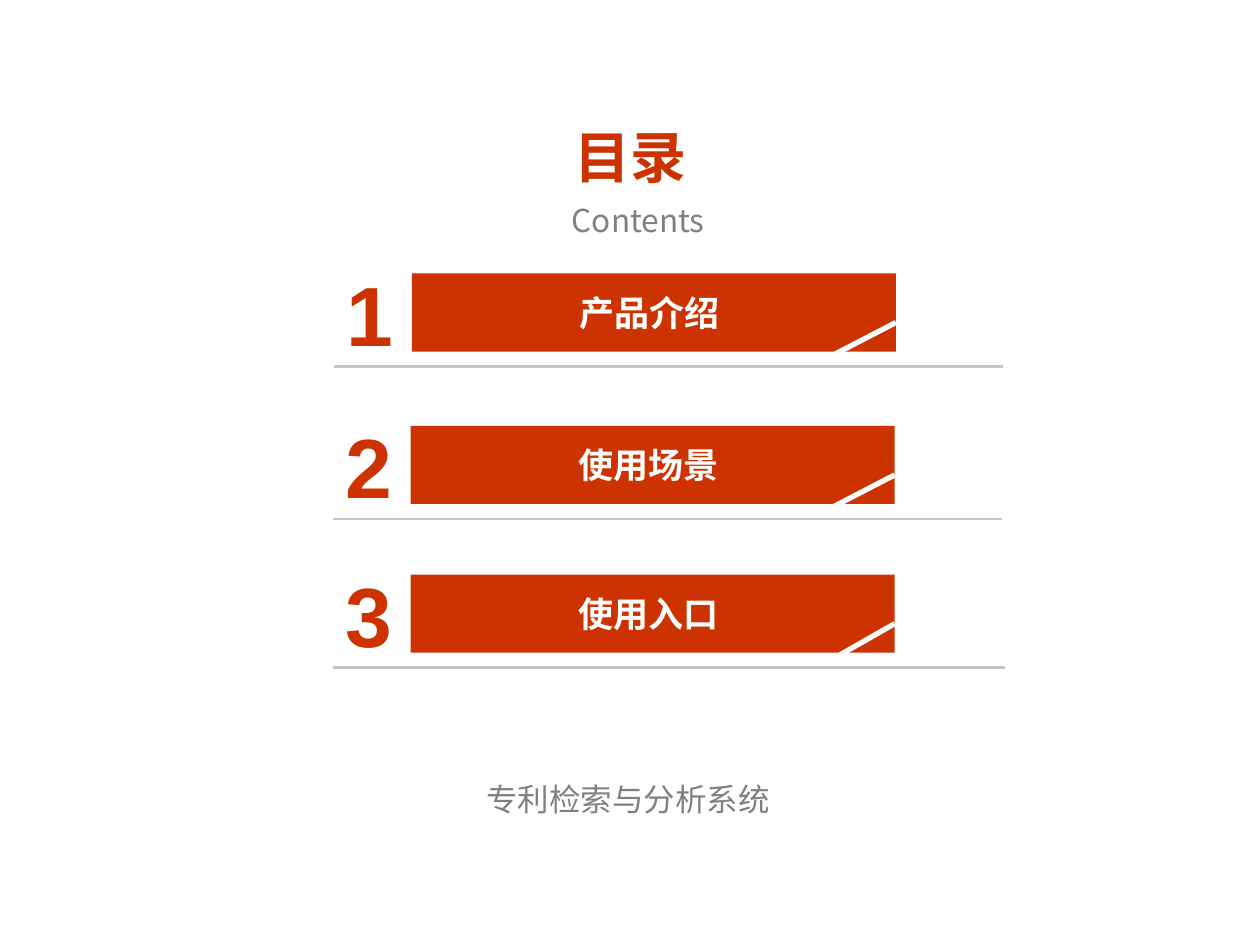
from dataclasses import dataclass

import lxml.etree
import pptx
import pptx.dml.color
import pptx.enum.shapes
import pptx.enum.text
import pptx.oxml.ns
import pptx.util

EMU_PER_PX = 9144  # 100 px to the inch
ALIGN = pptx.enum.text.PP_ALIGN
ANCHOR = pptx.enum.text.MSO_ANCHOR


@dataclass(frozen=True)
class Theme:
    accent: str = "CC3300"
    rule: str = "C5C5C5"
    muted: str = "808080"
    white: str = "FFFFFF"
    latin: str = "Arial"
    chinese: str = "Noto Sans CJK SC"
    number_size: int = 48
    title_size: int = 32
    bar_size: int = 20
    caption_size: int = 18
    slash_width: float = 3
    rule_width: float = 1.5


@dataclass(frozen=True)
class TextStyle:
    size: int
    color: str
    font: str
    bold: bool = False


@dataclass(frozen=True)
class Entry:
    number: str
    title: str
    left: int
    top: int
    slash_height: int = 29
    rule_length: int = 531


THEME = Theme()
NUMBER = TextStyle(THEME.number_size, THEME.accent, THEME.latin, True)
BAR = TextStyle(THEME.bar_size, THEME.white, THEME.chinese, True)
TITLE = TextStyle(THEME.title_size, THEME.accent, THEME.chinese, True)
SUBTITLE = TextStyle(THEME.caption_size, THEME.muted, THEME.chinese)
FOOTER = TextStyle(THEME.caption_size, THEME.muted, THEME.latin)

BAR_WIDTH, BAR_HEIGHT = 384, 62
# The space after each title shifts the centred text slightly left
ENTRIES = [
    Entry("1", "产品介绍 ", 327, 217),
    Entry("2", "使用场景 ", 326, 338),
    Entry("3", "使用入口 ", 326, 456, slash_height=32, rule_length=534),
]


def px(length: int) -> int:
    return pptx.util.Emu(length * EMU_PER_PX)


def rgb(color: str) -> pptx.dml.color.RGBColor:
    return pptx.dml.color.RGBColor.from_string(color)


def write(text_frame, text: str, style: TextStyle, align=ALIGN.LEFT) -> None:
    paragraph = text_frame.paragraphs[0]
    paragraph.alignment = align
    run = paragraph.add_run()
    run.text = text
    run.font.size = pptx.util.Pt(style.size)
    run.font.bold = style.bold
    run.font.name = style.font
    run.font.color.rgb = rgb(style.color)
    # Chinese characters take the East Asian font
    east_asian = lxml.etree.SubElement(
        run.font._element, pptx.oxml.ns.qn("a:ea"))
    east_asian.set("typeface", THEME.chinese)


def add_text(slide, left: int, top: int, width: int, height: int, text: str,
             style: TextStyle, align=ALIGN.LEFT, anchor=ANCHOR.TOP,
             wrap: bool = True) -> None:
    shape = slide.shapes.add_textbox(px(left), px(top), px(width), px(height))
    shape.text_frame.word_wrap = wrap
    shape.text_frame.vertical_anchor = anchor
    write(shape.text_frame, text, style, align)


def add_bar(slide, left: int, top: int, text: str) -> None:
    shape = slide.shapes.add_shape(
        pptx.enum.shapes.MSO_SHAPE.RECTANGLE,
        px(left), px(top), px(BAR_WIDTH), px(BAR_HEIGHT))
    shape.shadow.inherit = False
    shape.fill.solid()
    shape.fill.fore_color.rgb = rgb(THEME.accent)
    shape.line.fill.background()
    shape.text_frame.vertical_anchor = ANCHOR.MIDDLE
    write(shape.text_frame, text, BAR, ALIGN.CENTER)


def add_line(slide, start: tuple[int, int], end: tuple[int, int],
             color: str, width: float) -> None:
    connector = slide.shapes.add_connector(
        pptx.enum.shapes.MSO_CONNECTOR.STRAIGHT,
        px(start[0]), px(start[1]), px(end[0]), px(end[1]))
    connector.line.color.rgb = rgb(color)
    connector.line.width = pptx.util.Pt(width)
    lxml.etree.SubElement(
        connector._element.spPr, pptx.oxml.ns.qn("a:effectLst"))


def add_entry(slide, entry: Entry) -> None:
    left, top = entry.left, entry.top
    add_text(slide, left - 62, top - 14, 57, 90, entry.number, NUMBER,
             anchor=ANCHOR.MIDDLE, wrap=False)
    add_bar(slide, left, top, entry.title)
    # White slash across the lower right corner
    right, slash_top = left + BAR_WIDTH, top + 39
    add_line(slide, (right, slash_top),
             (right - 56, slash_top + entry.slash_height),
             THEME.white, THEME.slash_width)
    # Grey rule under the entry
    rule_left, rule_top = left - 62, top + 74
    add_line(slide, (rule_left, rule_top),
             (rule_left + entry.rule_length, rule_top),
             THEME.rule, THEME.rule_width)


def main() -> None:
    presentation = pptx.Presentation()
    presentation.slide_width = px(1000)
    presentation.slide_height = px(750)
    slide = presentation.slides.add_slide(presentation.slide_layouts[6])

    # Heading
    add_text(slide, 390, 92, 221, 63, "目录", TITLE, ALIGN.CENTER)
    add_text(slide, 444, 155, 128, 40, "Contents", SUBTITLE, wrap=False)

    # Numbered contents
    for entry in ENTRIES:
        add_entry(slide, entry)

    # Footer
    add_text(slide, 376, 614, 264, 40, "专利检索与分析系统", FOOTER)

    presentation.save("out.pptx")


if __name__ == "__main__":
    main()
